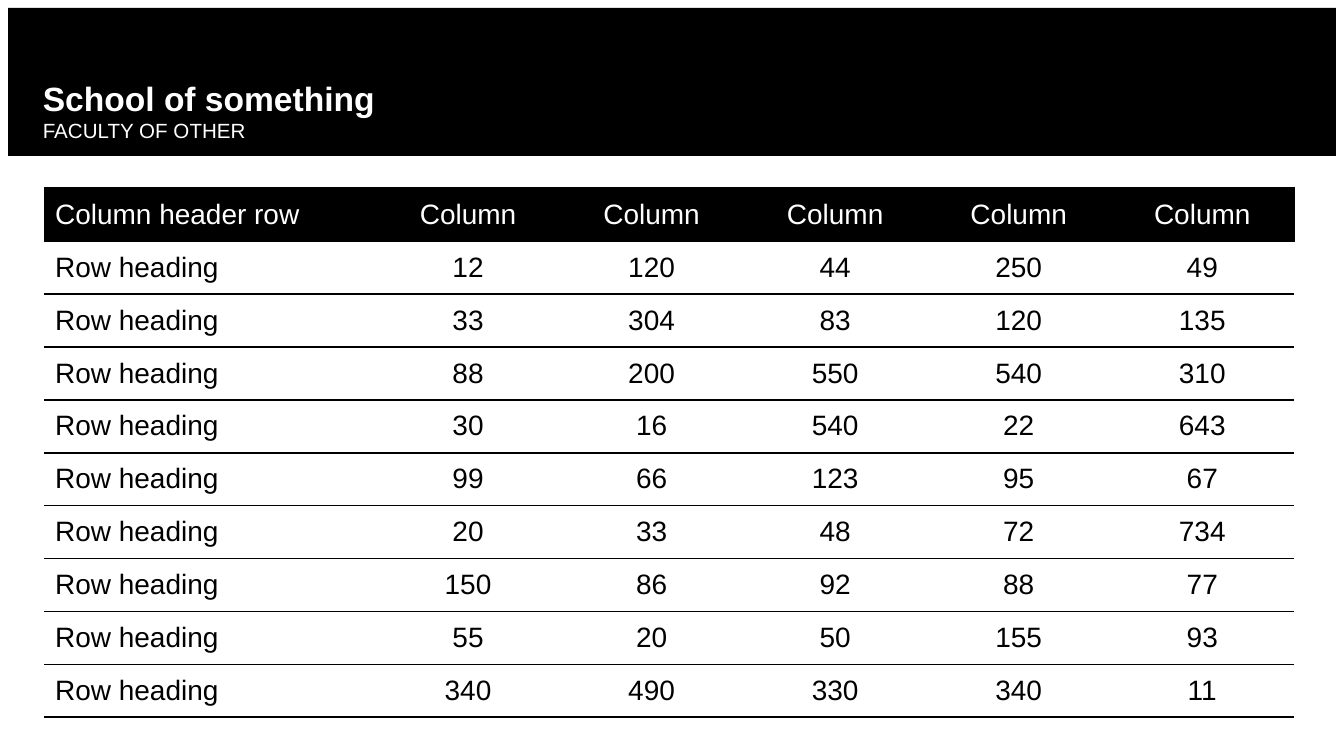
"""Build a slide with a school banner and a table of figures."""
from dataclasses import dataclass

from lxml.etree import SubElement
from pptx import Presentation
from pptx.dml.color import RGBColor
from pptx.enum.shapes import MSO_SHAPE
from pptx.enum.text import MSO_ANCHOR, PP_ALIGN
from pptx.oxml.ns import qn
from pptx.util import Inches, Pt

SCHOOL = "School of something"
FACULTY = "FACULTY OF OTHER"
HEADER = ["Column header row"] + ["Column"] * 5
FIGURES = [
    (12, 120, 44, 250, 49),
    (33, 304, 83, 120, 135),
    (88, 200, 550, 540, 310),
    (30, 16, 540, 22, 643),
    (99, 66, 123, 95, 67),
    (20, 33, 48, 72, 734),
    (150, 86, 92, 88, 77),
    (55, 20, 50, 155, 93),
    (340, 490, 330, 340, 11),
]
ROWS = [HEADER] + [["Row heading", *figures] for figures in FIGURES]


@dataclass(frozen=True)
class Theme:
    """Colours, font and type sizes of the slide."""
    dark: RGBColor = RGBColor(0, 0, 0)
    light: RGBColor = RGBColor(255, 255, 255)
    font: str = "Arial"
    title: Pt = Pt(18)
    subtitle: Pt = Pt(11)
    table: Pt = Pt(15)
    rule: Pt = Pt(1)


THEME = Theme()


def style_text(paragraph, size, color, bold=False):
    """Format the runs of a paragraph."""
    for run in paragraph.runs:
        font = run.font
        font.name, font.size, font.bold = THEME.font, size, bold
        font.color.rgb = color


def set_borders(cell, visible):
    """Rule the visible sides of a cell and clear the others."""
    properties = cell._tc.get_or_add_tcPr()
    for side in "LRTB":
        line = SubElement(properties, qn(f"a:ln{side}"), w=str(int(THEME.rule)))
        if side in visible:
            fill = SubElement(line, qn("a:solidFill"))
            SubElement(fill, qn("a:srgbClr"), val=str(THEME.dark))
        else:
            SubElement(line, qn("a:noFill"))


def add_banner(slide):
    """Add the dark band with the school and faculty names."""
    band = slide.shapes.add_shape(
        MSO_SHAPE.RECTANGLE, Inches(0.06), Inches(0.06), Inches(9.88), Inches(1.1))
    band.shadow.inherit = False
    band.fill.solid()
    band.fill.fore_color.rgb = THEME.dark
    band.line.fill.background()

    names = slide.shapes.add_textbox(
        Inches(0.22), Inches(0.53), Inches(4.02), Inches(0.88))
    text_frame = names.text_frame
    text_frame.word_wrap = True
    text_frame.text = f"{SCHOOL}\n{FACULTY}"
    school, faculty = text_frame.paragraphs
    style_text(school, THEME.title, THEME.light, bold=True)
    style_text(faculty, THEME.subtitle, THEME.light)


def fill_cell(cell, value, is_header, is_heading):
    """Write and format one table cell."""
    cell.text = str(value)
    cell.vertical_anchor = MSO_ANCHOR.MIDDLE
    cell.margin_left = cell.margin_right = Inches(0.08)
    cell.margin_top = cell.margin_bottom = Inches(0.04)
    set_borders(cell, "LRTB" if is_header else "TB")
    if is_header:
        cell.fill.solid()
        cell.fill.fore_color.rgb = THEME.dark
    else:
        cell.fill.background()
    paragraph = cell.text_frame.paragraphs[0]
    paragraph.alignment = PP_ALIGN.LEFT if is_heading else PP_ALIGN.CENTER
    style_text(paragraph, THEME.table, THEME.light if is_header else THEME.dark)


def add_figures(slide):
    """Add the table with a wide heading column and equal rows."""
    width, height, heading_width = Inches(9.3), Inches(3.94), Inches(2.47)
    table = slide.shapes.add_table(
        len(ROWS), len(HEADER), Inches(0.33), Inches(1.4), width, height).table
    table.first_row = table.horz_banding = False
    for index, column in enumerate(table.columns):
        column.width = (width - heading_width) // (len(HEADER) - 1) if index else heading_width
    for row_index, values in enumerate(ROWS):
        table.rows[row_index].height = height // len(ROWS)
        for column_index, value in enumerate(values):
            fill_cell(table.cell(row_index, column_index), value,
                      row_index == 0, column_index == 0)


def main():
    """Build and save the presentation."""
    presentation = Presentation()
    presentation.slide_width = Inches(10)
    presentation.slide_height = presentation.slide_width * 9 // 16
    slide = presentation.slides.add_slide(presentation.slide_layouts[6])
    add_banner(slide)
    add_figures(slide)
    presentation.save("out.pptx")


if __name__ == "__main__":
    main()
